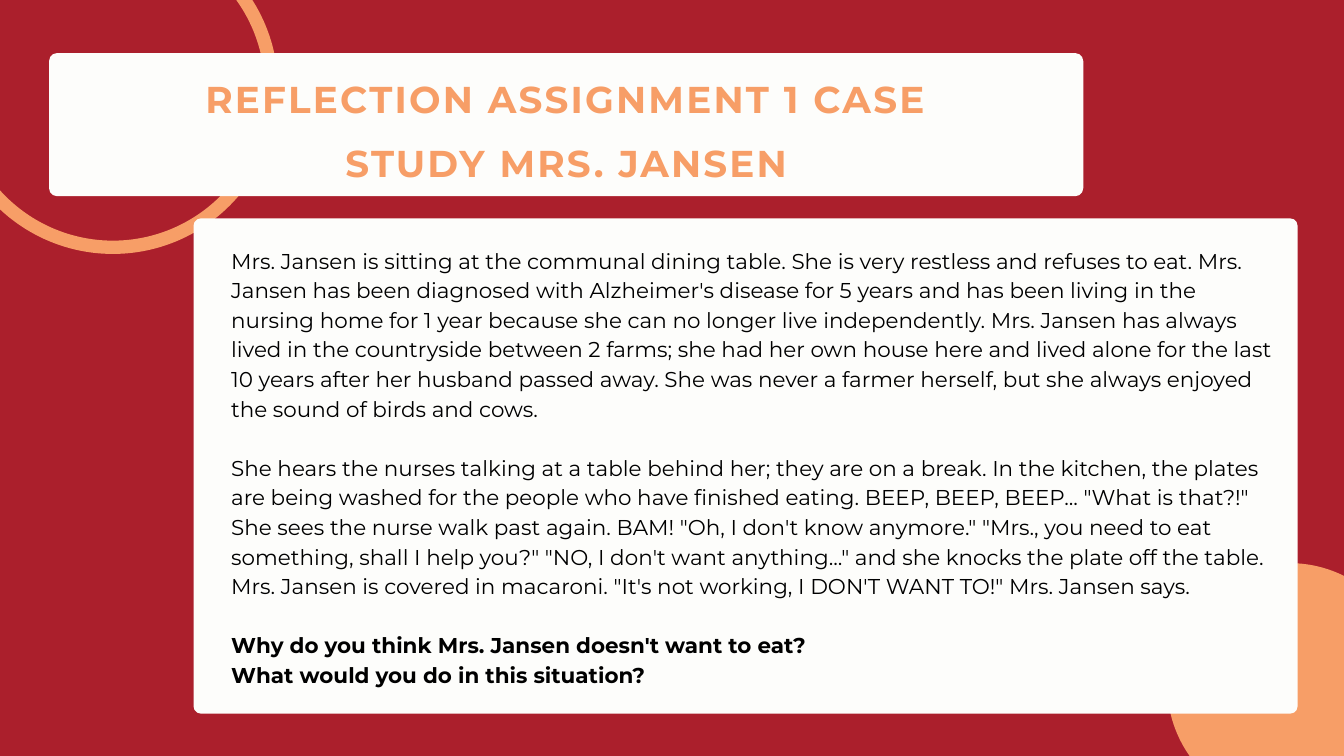
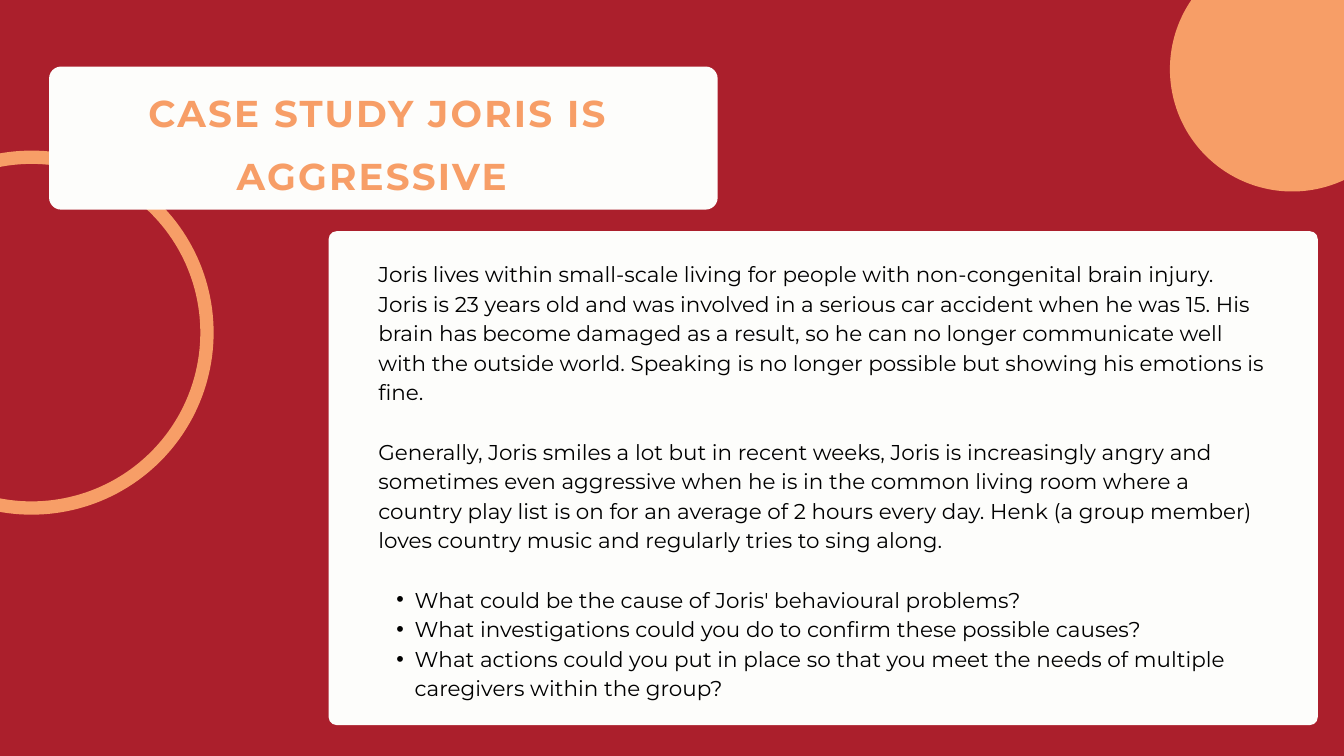
from dataclasses import dataclass

from lxml.etree import SubElement
from pptx import Presentation
from pptx.dml.color import RGBColor
from pptx.enum.shapes import MSO_SHAPE
from pptx.enum.text import PP_ALIGN
from pptx.oxml.ns import qn
from pptx.util import Inches, Pt

RED, ORANGE, CREAM, BLACK = "AB1F2C", "F79E67", "FDFDFB", "000000"
FONT = "Montserrat"
BODY_LEADING = Pt(31.7)
DISC_SIZE = 3.64


@dataclass
class Box:
    """A rectangle measured in inches."""
    left: float
    top: float
    width: float
    height: float

    def inner(self, left, top, width, height):
        """Return a box placed relative to this one."""
        return Box(self.left + left, self.top + top, width, height)

    def lengths(self):
        """Return the four measures as slide lengths."""
        return [Inches(value) for value in (self.left, self.top, self.width, self.height)]


@dataclass
class Passage:
    """A paragraph of body text and its style."""
    text: str
    bold: bool = False
    bullet: bool = False
    gap: bool = False


def color(value):
    """Turn a hex string into a colour."""
    return RGBColor.from_string(value)


def add_plain_shape(page, kind, box, fill=None, line=None):
    """Add a preset shape without shadow, filled or outlined."""
    shape = page.shapes.add_shape(kind, *box.lengths())
    shape.shadow.inherit = False
    if fill:
        shape.fill.solid()
        shape.fill.fore_color.rgb = color(fill)
    else:
        shape.fill.background()
    if line:
        shape.line.color.rgb = color(line)
        shape.line.width = Pt(14.25)
    else:
        shape.line.fill.background()
    return shape


def add_panel(page, box, radius):
    """Add a cream panel with rounded corners."""
    panel = add_plain_shape(page, MSO_SHAPE.ROUNDED_RECTANGLE, box, CREAM)
    panel.adjustments[0] = radius / min(box.width, box.height)


def add_circles(page, ring, disc_left, disc_top):
    """Add the decorative ring and disc."""
    add_plain_shape(page, MSO_SHAPE.OVAL, ring, line=ORANGE)
    disc = Box(disc_left, disc_top, DISC_SIZE, DISC_SIZE)
    add_plain_shape(page, MSO_SHAPE.OVAL, disc, ORANGE)


def add_text_frame(page, box):
    """Add a wrapping text box without margins."""
    frame = page.shapes.add_textbox(*box.lengths()).text_frame
    frame.word_wrap = True
    frame.margin_left = frame.margin_top = frame.margin_right = frame.margin_bottom = 0
    return frame


def style_span(span, size, ink, bold):
    """Set the font of a run."""
    span.font.name = FONT
    span.font.size = Pt(size)
    span.font.bold = bold
    span.font.color.rgb = color(ink)


def add_title(page, panel, radius, text, indent, text_width):
    """Add the title panel with its spaced heading."""
    add_panel(page, panel, radius)
    frame = add_text_frame(page, panel.inner(indent, 0.07, text_width, 2.73))
    frame.text = text
    para = frame.paragraphs[0]
    para.alignment = PP_ALIGN.CENTER
    para.line_spacing = Pt(68)
    span = para.runs[0]
    style_span(span, 40, ORANGE, True)
    span.font._element.set("spc", "240")


def add_bullet(para):
    """Give a paragraph a round bullet and a hanging indent."""
    para.level = 1
    properties = para._p.get_or_add_pPr()
    properties.set("marL", str(Inches(0.54)))
    properties.set("indent", str(Inches(-0.27)))
    SubElement(properties, qn("a:buFont"), typeface="Arial")
    SubElement(properties, qn("a:buChar"), char="•")


def add_body(page, panel, radius, text_box, passages):
    """Add the body panel with its passages."""
    add_panel(page, panel, radius)
    frame = add_text_frame(page, text_box)
    frame.text = "\n".join(passage.text for passage in passages)
    for para, passage in zip(frame.paragraphs, passages):
        if passage.bullet:
            add_bullet(para)
        para.line_spacing = BODY_LEADING
        if passage.gap:
            para.space_before = BODY_LEADING
        style_span(para.runs[0], 23, BLACK, passage.bold)


def add_page(deck):
    """Add a blank page with the red background."""
    page = deck.slides.add_slide(deck.slide_layouts[6])
    page.background.fill.solid()
    page.background.fill.fore_color.rgb = color(RED)
    return page


def build_jansen_page(deck):
    """Build the case study about Mrs. Jansen."""
    page = add_page(deck)
    add_circles(page, Box(-0.68, -1.04, 4.72, 4.72), 17.37, 8.38)
    panel = Box(2.88, 3.25, 16.43, 7.37)
    add_body(page, panel, 0.11, panel.inner(0.56, 0.38, 15.67, 7.42), [
        Passage(
            "Mrs. Jansen is sitting at the communal dining table. She is very restless and "
            "refuses to eat. Mrs. Jansen has been diagnosed with Alzheimer's disease for 5 years "
            "and has been living in the nursing home for 1 year because she can no longer live "
            "independently. Mrs. Jansen has always lived in the countryside between 2 farms; she "
            "had her own house here and lived alone for the last 10 years after her husband "
            "passed away. She was never a farmer herself, but she always enjoyed the sound of "
            "birds and cows."),
        Passage(
            "She hears the nurses talking at a table behind her; they are on a break. In the "
            "kitchen, the plates are being washed for the people who have finished eating. BEEP, "
            "BEEP, BEEP... \"What is that?!\" She sees the nurse walk past again. BAM! \"Oh, I "
            "don't know anymore.\" \"Mrs., you need to eat something, shall I help you?\" \"NO, I "
            "don't want anything...\" and she knocks the plate off the table. Mrs. Jansen is "
            "covered in macaroni. \"It's not working, I DON'T WANT TO!\" Mrs. Jansen says.",
            gap=True),
        Passage("Why do you think Mrs. Jansen doesn't want to eat?", bold=True, gap=True),
        Passage("What would you do in this situation?", bold=True),
    ])
    add_title(page, Box(0.73, 0.79, 15.39, 2.13), 0.12,
              "REFLECTION ASSIGNMENT 1 CASE STUDY MRS. JANSEN", 1.2, 13)


def build_joris_page(deck):
    """Build the case study about Joris."""
    page = add_page(deck)
    add_circles(page, Box(-2.14, 2.34, 5.22, 5.22), 17.41, -0.79)
    panel = Box(4.89, 3.44, 14.72, 7.35)
    add_body(page, panel, 0.12, panel.inner(0.74, 0.39, 13.25, 7.86), [
        Passage(
            "Joris lives within small-scale living for people with non-congenital brain injury. "
            "Joris is 23 years old and was involved in a serious car accident when he was 15. "
            "His brain has become damaged as a result, so he can no longer communicate well with "
            "the outside world. Speaking is no longer possible but showing his emotions is fine."),
        Passage(
            "Generally, Joris smiles a lot but in recent weeks, Joris is increasingly angry and "
            "sometimes even aggressive when he is in the common living room where a country play "
            "list is on for an average of 2 hours every day. Henk (a group member) loves country "
            "music and regularly tries to sing along.", gap=True),
        Passage("What could be the cause of Joris' behavioural problems?", bullet=True, gap=True),
        Passage("What investigations could you do to confirm these possible causes?", bullet=True),
        Passage(
            "What actions could you put in place so that you meet the needs of multiple "
            "caregivers within the group?", bullet=True),
    ])
    add_title(page, Box(0.73, 0.99, 9.95, 2.13), 0.18,
              "CASE STUDY JORIS IS AGGRESSIVE ", 0.68, 8.44)


def main():
    """Build and save the deck."""
    deck = Presentation()
    deck.slide_width, deck.slide_height = Inches(20), Inches(11.25)
    build_jansen_page(deck)
    build_joris_page(deck)
    deck.save("out.pptx")


if __name__ == "__main__":
    main()
